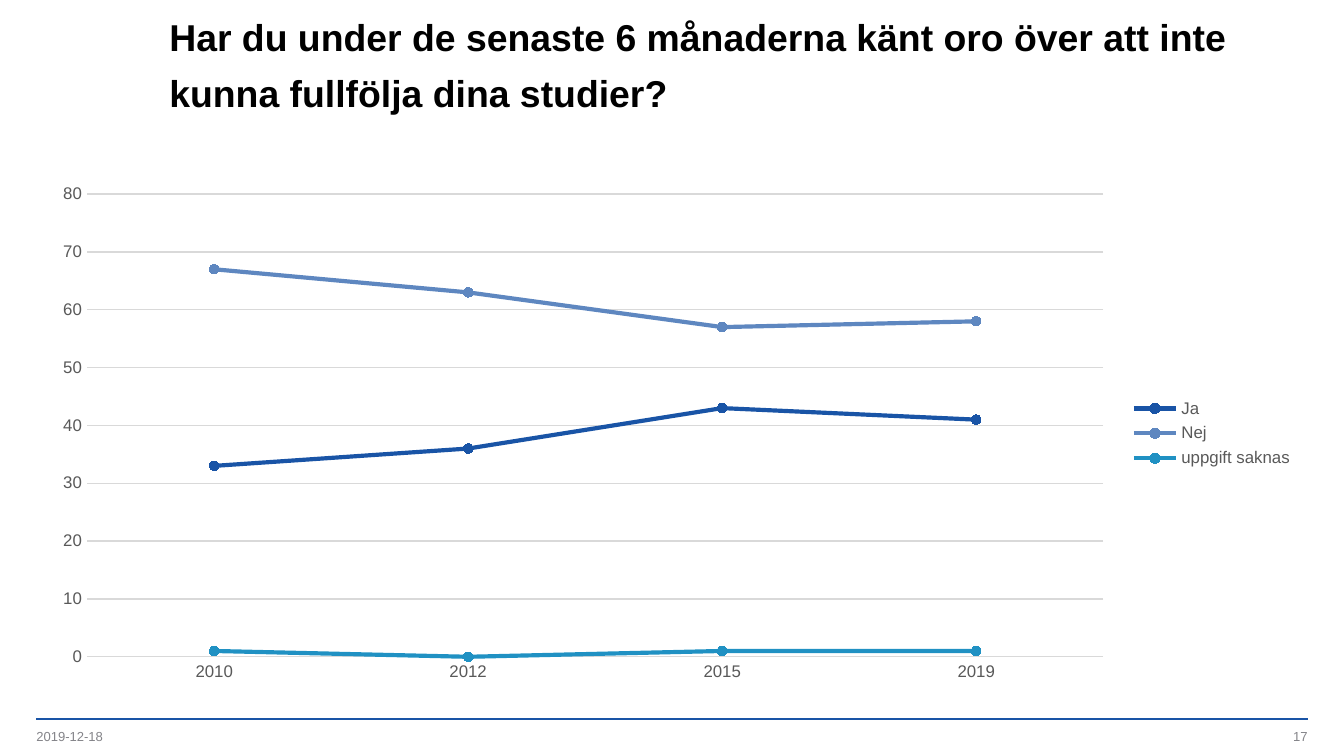
from lxml.etree import SubElement
from pptx import Presentation
from pptx.chart.data import CategoryChartData
from pptx.dml.color import RGBColor
from pptx.enum.chart import XL_CHART_TYPE, XL_LEGEND_POSITION, XL_MARKER_STYLE, XL_TICK_MARK
from pptx.enum.shapes import MSO_CONNECTOR
from pptx.enum.text import MSO_ANCHOR, PP_ALIGN
from pptx.oxml import parse_xml
from pptx.oxml.ns import nsdecls, qn
from pptx.util import Pt

FONT = "Arial"
COLORS = {
    "title": "000000",
    "footer": "848489",
    "rule": "1954A6",
    "axis_text": "595959",
    "grid": "D9D9D9",
    "Ja": "1954A6",
    "Nej": "5E87C0",
    "uppgift saknas": "2091C3",
}
YEARS = ["2010", "2012", "2015", "2019"]
ANSWERS = {
    "Ja": [33, 36, 43, 41],
    "Nej": [67, 63, 57, 58],
    "uppgift saknas": [1, 0, 1, 1],
}
PLOT_LAYOUT = {"x": 0.04, "y": 0.04, "w": 0.8, "h": 0.89}


def rgb(name):
    """Return the named colour."""
    return RGBColor.from_string(COLORS[name])


def format_font(font, size, color, bold=False):
    """Set typeface, size, colour and weight."""
    font.name = FONT
    font.size = Pt(size)
    font.bold = bold
    font.color.rgb = rgb(color)


def format_line(line, color, width):
    """Set the colour and width of a line."""
    line.color.rgb = rgb(color)
    line.width = Pt(width)


def add_text(slide, text, left, top, width, height, size, color, bold=False,
             align=PP_ALIGN.LEFT, spacing=None):
    """Add a text box without insets."""
    shape = slide.shapes.add_textbox(Pt(left), Pt(top), Pt(width), Pt(height))
    frame = shape.text_frame
    frame.word_wrap = True
    frame.vertical_anchor = MSO_ANCHOR.MIDDLE
    frame.margin_left = frame.margin_right = frame.margin_top = frame.margin_bottom = 0
    paragraph = frame.paragraphs[0]
    paragraph.alignment = align
    if spacing:
        paragraph.line_spacing = Pt(spacing)
    run = paragraph.add_run()
    run.text = text
    format_font(run.font, size, color, bold)


def add_rule(slide, left, right, top):
    """Add the horizontal rule above the footer."""
    connector = slide.shapes.add_connector(
        MSO_CONNECTOR.STRAIGHT, Pt(left), Pt(top), Pt(right), Pt(top))
    format_line(connector.line, "rule", 1)
    SubElement(connector.element.spPr, qn("a:effectLst"))


def place_plot(chart):
    """Fix the inner plot area as fractions of the chart."""
    plot_area = chart.element.find(".//" + qn("c:plotArea"))
    for layout in plot_area.findall(qn("c:layout")):
        plot_area.remove(layout)
    modes = '<c:layoutTarget val="inner"/><c:xMode val="edge"/><c:yMode val="edge"/>'
    sizes = "".join(f'<c:{key} val="{value}"/>' for key, value in PLOT_LAYOUT.items())
    plot_area.insert(0, parse_xml(
        f'<c:layout {nsdecls("c")}><c:manualLayout>{modes}{sizes}</c:manualLayout></c:layout>'))


def format_axes(chart):
    """Style both axes and the gridlines."""
    for axis in (chart.category_axis, chart.value_axis):
        axis.major_tick_mark = axis.minor_tick_mark = XL_TICK_MARK.NONE
        format_font(axis.tick_labels.font, 9, "axis_text")
    format_line(chart.category_axis.format.line, "grid", 0.75)
    value_axis = chart.value_axis
    value_axis.minimum_scale, value_axis.maximum_scale = 0, 80
    value_axis.major_unit = 10
    value_axis.format.line.fill.background()
    format_line(value_axis.major_gridlines.format.line, "grid", 0.75)


def format_series(series):
    """Style one answer's line and markers."""
    series.smooth = False
    format_line(series.format.line, series.name, 2.25)
    marker = series.marker
    marker.style = XL_MARKER_STYLE.CIRCLE
    marker.size = 5
    marker.format.fill.solid()
    marker.format.fill.fore_color.rgb = rgb(series.name)
    format_line(marker.format.line, series.name, 0.75)


def add_answer_chart(slide, left, top, width, height):
    """Add the line chart of answers by year."""
    data = CategoryChartData()
    data.categories = YEARS
    for name, values in ANSWERS.items():
        data.add_series(name, values)
    chart = slide.shapes.add_chart(
        XL_CHART_TYPE.LINE_MARKERS, Pt(left), Pt(top), Pt(width), Pt(height), data).chart
    chart.has_title = False
    format_font(chart.font, 10, "title")
    chart.has_legend = True
    chart.legend.position = XL_LEGEND_POSITION.RIGHT
    chart.legend.include_in_layout = False
    format_font(chart.legend.font, 9, "axis_text")
    chart.plots[0].vary_by_categories = False
    format_axes(chart)
    for series in chart.plots[0].series:
        format_series(series)
    place_plot(chart)


def main():
    """Build and save the slide."""
    presentation = Presentation()
    presentation.slide_width, presentation.slide_height = Pt(720), Pt(405)
    slide = presentation.slides.add_slide(presentation.slide_layouts[6])
    add_rule(slide, 19.5, 700.5, 385.2)
    add_text(slide, "Har du under de senaste 6 månaderna känt oro över att inte "
             "kunna fullfölja dina studier?", 90.7, 1.5, 580, 60,
             size=20, color="title", bold=True, spacing=30)
    add_text(slide, "2019-12-18", 19.5, 389.8, 162, 9.4, size=7, color="footer")
    add_text(slide, "17", 538.5, 389.8, 162, 9.4, size=7, color="footer",
             align=PP_ALIGN.RIGHT)
    add_answer_chart(slide, 19.5, 92.9, 680.4, 278.6)
    presentation.save("out.pptx")


if __name__ == "__main__":
    main()
